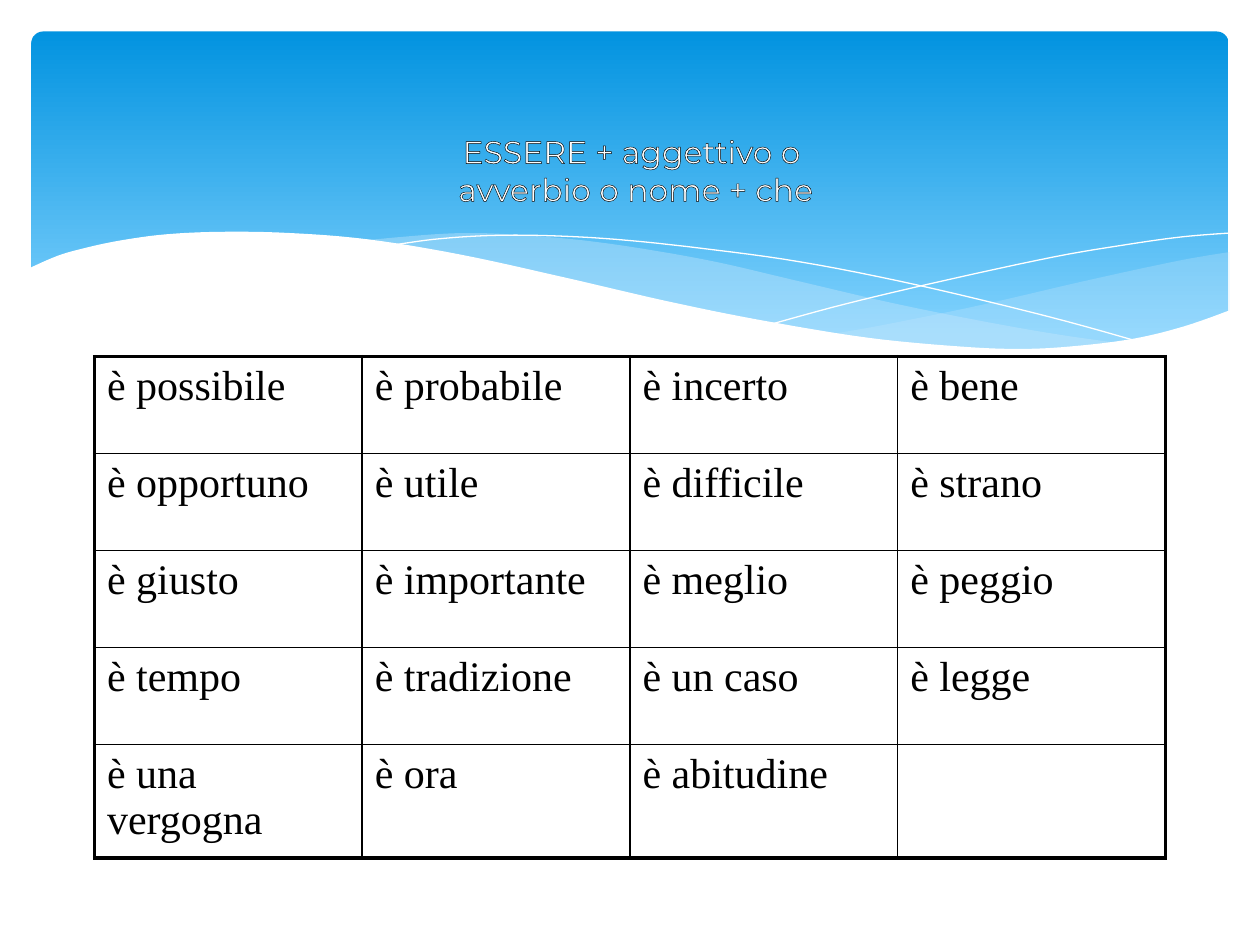
from lxml import etree
from pptx import Presentation
from pptx import util as u
from pptx.dml.color import RGBColor
from pptx.enum import shapes, text
from pptx.oxml import ns

WIDE, HIGH = 10, 7.5
COLS, ROWS = 4, 5
STEPS = 6
BLACK, WHITE, PALE = "000000", "FFFFFF", "C6E7FC"
WORDS = [
    ["è possibile", "è probabile", "è incerto", "è bene"],
    ["è opportuno", "è utile", "è difficile", "è strano"],
    ["è giusto", "è importante", "è meglio", "è peggio"],
    ["è tempo", "è tradizione", "è un caso", "è legge"],
    ["è una vergogna", "è ora", "è abitudine", ""],
]
TITLE = ["ESSERE + aggettivo o ", "avverbio o nome + che"]

RIGHT_TOP = [(9.76, 2), (9.35, 2.07), (8.61, 2.23), (7.79, 2.42), (7.06, 2.57), (6.61, 2.65)]
RIGHT_LOW = [(6.61, 2.65), (7.05, 2.71), (7.57, 2.76), (8.14, 2.78), (8.63, 2.75),
             (9.05, 2.69), (9.42, 2.59), (9.76, 2.47)]
MID_TOP = [(8.93, 2.73), (8.37, 2.65), (7.75, 2.54), (7.06, 2.4), (6.29, 2.22), (5.69, 2.08),
           (5.14, 1.98), (4.65, 1.91), (4.2, 1.87), (3.8, 1.85), (3.44, 1.86), (2.86, 1.91)]
MID_LOW = [(2.86, 1.91), (3.42, 1.99), (4.04, 2.11), (4.91, 2.32), (5.66, 2.48), (6.34, 2.61),
           (6.95, 2.7), (7.48, 2.76), (7.96, 2.78), (8.48, 2.77), (8.93, 2.73)]
FALL = [(3.09, 1.95), (3.44, 1.9), (3.87, 1.87), (4.33, 1.87), (4.89, 1.9), (5.56, 1.97),
        (6.36, 2.08), (7.27, 2.26), (8.31, 2.51), (9.07, 2.72)]
RISE = [(6.13, 2.57), (6.72, 2.41), (7.48, 2.23), (8.36, 2.04), (8.95, 1.94), (9.38, 1.88), (9.75, 1.85)]
FRONT = [(9.77, 2.46), (9.4, 2.59), (8.99, 2.69), (8.5, 2.75), (8.09, 2.77), (7.61, 2.75),
         (6.88, 2.68), (6.03, 2.54), (5.29, 2.39), (4.47, 2.2), (3.65, 2.02), (2.92, 1.9),
         (2.3, 1.85), (1.77, 1.84), (1.32, 1.86), (0.95, 1.91), (0.67, 1.97), (0.46, 2.03), (0.23, 2.13)]
BASE = [(0.23, 3.29), (9.77, 3.29)]


def tint(code):
    return RGBColor.from_string(code)


def node(root, tag, **attrs):
    return etree.SubElement(root, ns.qn(tag), **attrs)


def edge(root, tag, code, size):
    line = node(root, tag, w=str(u.Pt(size)))
    node(node(line, "a:solidFill"), "a:srgbClr", val=code)
    return line


def curve(knots):
    ends = [knots[0], *knots, knots[-1]]
    out = [knots[0]]
    for a, b, c, d in zip(ends, ends[1:], ends[2:], ends[3:]):
        for step in range(1, STEPS + 1):
            t = step / STEPS
            out.append(tuple(
                q + t / 2 * (r - p + t * (2 * p - 5 * q + 4 * r - s + t * (3 * (q - r) + s - p)))
                for p, q, r, s in zip(a, b, c, d)))
    return out


def trace(slide, dots, closed):
    dots = [(u.Inches(x), u.Inches(y)) for x, y in dots]
    pen = slide.shapes.build_freeform(*dots[0], scale=1.0)
    pen.add_line_segments(dots[1:], close=closed)
    shape = pen.convert_to_shape()
    shape.shadow.inherit = False
    return shape


def wave(slide, dots, code, alpha=100):
    shape = trace(slide, dots, True)
    shape.fill.solid()
    shape.fill.fore_color.rgb = tint(code)
    shape.line.fill.background()
    if alpha < 100:
        hue = shape.fill._xPr.find(".//" + ns.qn("a:srgbClr"))
        node(hue, "a:alpha", val=str(alpha * 1000))


def thread(slide, knots):
    shape = trace(slide, curve(knots), False)
    shape.fill.background()
    shape.line.color.rgb = tint(WHITE)
    shape.line.width = 0


def panel(slide):
    box = [u.Inches(n) for n in (0.25, 0.25, WIDE * 0.95, HIGH * 0.36)]
    shape = slide.shapes.add_shape(shapes.MSO_SHAPE.ROUNDED_RECTANGLE, *box)
    shape.adjustments[0] = 0.034
    shape.shadow.inherit = False
    shape.line.fill.background()
    shape.fill.gradient()
    shape.fill.gradient_angle = 270
    stops = zip(shape.fill.gradient_stops, (0, 0.9), ("0293E0", "83D3FE"))
    for stop, place, code in stops:
        stop.position = place
        stop.color.rgb = tint(code)


def title(slide):
    box = slide.shapes.add_textbox(*[u.Inches(n) for n in (3, 1, 4.09, 0.94)])
    frame = box.text_frame
    frame.word_wrap = False
    frame.text = "\n".join(TITLE)
    for para in frame.paragraphs:
        para.alignment = text.PP_ALIGN.CENTER
        for run in para.runs:
            font = run.font
            font.name, font.size = "Montserrat", u.Pt(18)
            font.color.rgb = tint(WHITE)
            props = run._r.get_or_add_rPr()
            props.insert(0, edge(props, "a:ln", BLACK, 0.75))


def fill_cell(cell, words, rims):
    for side, outer in rims.items():
        edge(cell._tc.get_or_add_tcPr(), "a:ln" + side, BLACK, 2.25 if outer else 1)
    cell.fill.background()
    cell.text = words
    para = cell.text_frame.paragraphs[0]
    para.font.name, para.font.size = "Times New Roman", u.Pt(24)
    para.font.color.rgb = tint(BLACK)
    gap = etree.Element(ns.qn("a:spcBef"))
    node(gap, "a:spcPct", val="20000")
    para._p.get_or_add_pPr().insert(0, gap)


def grid(slide):
    box = [u.Inches(n) for n in (0.75, 2.83, WIDE * 0.85, 3.97)]
    table = slide.shapes.add_table(ROWS, COLS, *box).table
    table.first_row = table.horz_banding = False
    for r, line in enumerate(WORDS):
        table.rows[r].height = u.Inches(0.9 if r == ROWS - 1 else 0.77)
        for c, words in enumerate(line):
            rims = {"L": c == 0, "R": c == COLS - 1, "T": r == 0, "B": r == ROWS - 1}
            fill_cell(table.cell(r, c), words, rims)


def main():
    deck = Presentation()
    deck.slide_width, deck.slide_height = u.Inches(WIDE), u.Inches(HIGH)
    slide = deck.slides.add_slide(deck.slide_layouts[6])
    panel(slide)
    wave(slide, curve(RIGHT_TOP) + curve(RIGHT_LOW), PALE, 29)
    wave(slide, curve(MID_TOP) + curve(MID_LOW), PALE, 40)
    thread(slide, FALL)
    thread(slide, RISE)
    wave(slide, curve(FRONT) + BASE, WHITE)
    title(slide)
    grid(slide)
    deck.save("out.pptx")


if __name__ == "__main__":
    main()
